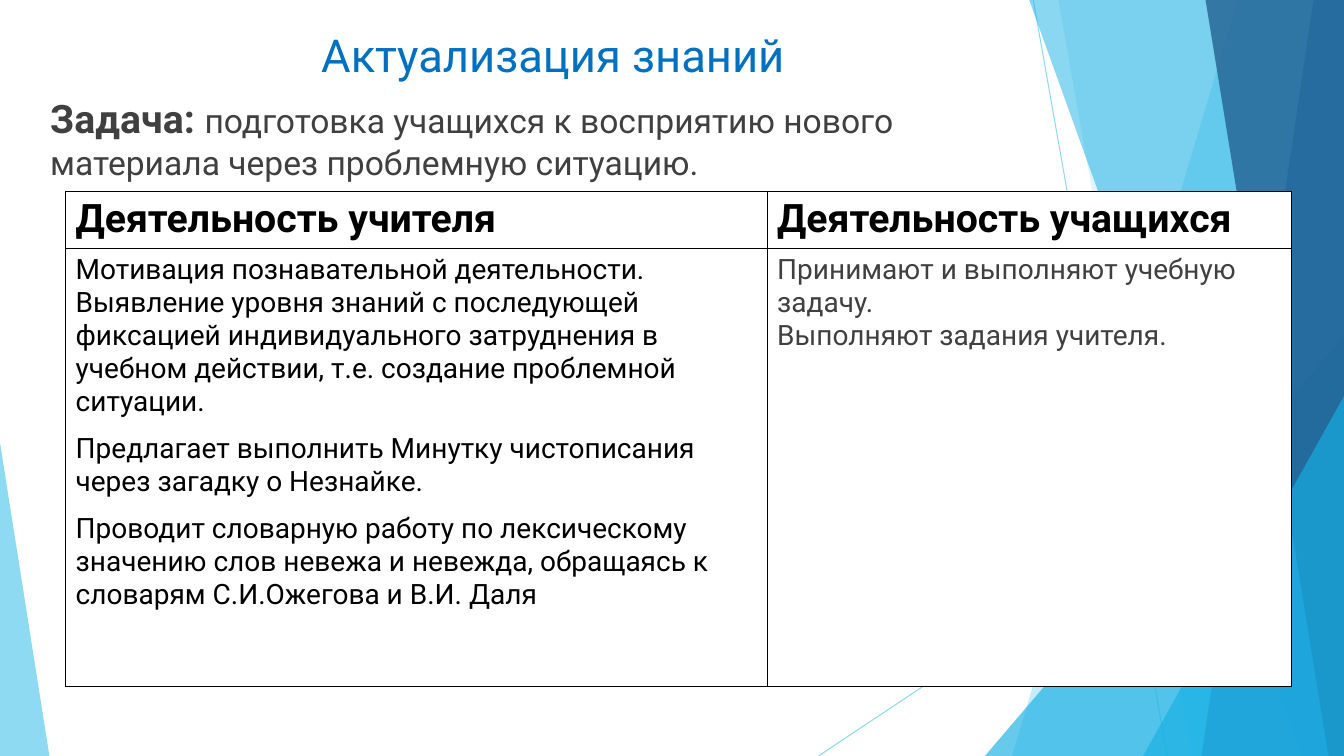
from dataclasses import dataclass

from lxml.etree import SubElement
from pptx import Presentation
from pptx.dml.color import RGBColor
from pptx.enum.shapes import MSO_CONNECTOR as Connector, MSO_SHAPE as Preset
from pptx.enum.text import MSO_ANCHOR as Anchor, PP_ALIGN as Align
from pptx.oxml.ns import qn
from pptx.util import Inches, Pt

FONT = "Roboto"
WHITE = RGBColor(0xFF, 0xFF, 0xFF)
BLACK = RGBColor(0x00, 0x00, 0x00)
GREY = RGBColor(0x40, 0x40, 0x40)
TITLE_BLUE = RGBColor(0x00, 0x70, 0xC0)
SKY = RGBColor(0x5F, 0xCB, 0xEF)
CYAN = RGBColor(0x17, 0xB0, 0xE4)
STEEL = RGBColor(0x2E, 0x83, 0xC3)
NAVY = RGBColor(0x22, 0x62, 0x92)

WIDTH, HEIGHT = Inches(13.333), Inches(7.5)


# Positions are percentages of the slide's width and height
def across(share: float) -> int:
    return round(WIDTH * share / 100)


def down(share: float) -> int:
    return round(HEIGHT * share / 100)


@dataclass
class Ray:
    """Thin line between two points."""
    x1: float
    y1: float
    x2: float
    y2: float


@dataclass
class Facet:
    """Full-height band from a slanted left edge to the slide's right edge."""
    top_left: float
    bottom_left: float
    color: RGBColor
    opacity: int


@dataclass
class Corner:
    """Triangle standing on the bottom edge; apex is 0 (left) or 1 (right)."""
    left: float
    top: float
    width: float
    apex: int
    color: RGBColor
    opacity: int


@dataclass
class Span:
    text: str
    size: float
    color: RGBColor
    bold: bool = False


@dataclass
class Cell:
    paragraphs: list[Span]
    space_after: int = 0


RAYS = [Ray(76.88, 0, 86.85, 100), Ray(100, 53.73, 60.9, 100)]
BACKDROP = [
    Facet(92.1, 75.3, SKY, 36),
    Facet(78.75, 88.73, SKY, 20),
    Corner(73.28, 44.4, 26.72, 1, CYAN, 66),
    Facet(76.58, 96.83, CYAN, 50),
    Facet(97.73, 89.4, STEEL, 70),
    Facet(89.7, 98.85, NAVY, 80),
    Corner(85.05, 52.4, 14.95, 1, CYAN, 66),
    Corner(0, 58.53, 3.68, 0, SKY, 70),
]

TITLE = [Span("Актуализация знаний", 32.4, TITLE_BLUE)]
TASK = [
    Span("Задача: ", 28, GREY, True),
    Span("подготовка учащихся к восприятию нового материала "
         "через проблемную ситуацию.", 24, GREY),
]
COLUMN_SHARES = [52.2, 39]
ROW_SHARES = [7.3, 57.9]
ROWS = [
    [Cell([Span("Деятельность учителя", 28, BLACK, True)]),
     Cell([Span("Деятельность учащихся", 28, BLACK, True)])],
    [Cell([
        Span("Мотивация познавательной деятельности. Выявление уровня знаний "
             "с последующей фиксацией индивидуального затруднения в учебном "
             "действии, т.е. создание проблемной ситуации.", 20, BLACK),
        Span("Предлагает выполнить Минутку чистописания через загадку "
             "о Незнайке.", 20, BLACK),
        Span("Проводит словарную работу по лексическому значению слов невежа "
             "и невежда, обращаясь к словарям С.И.Ожегова и В.И. Даля",
             20, BLACK),
    ], space_after=10),
     Cell([Span("Принимают и выполняют учебную задачу.", 20, GREY),
           Span("Выполняют задания учителя.", 20, GREY)])],
]


def set_opacity(fill_parent, opacity: int) -> None:
    color = fill_parent.find(qn("a:solidFill"))[0]
    SubElement(color, qn("a:alpha"), val=str(opacity * 1000))


def draw_ray(page, ray: Ray) -> None:
    line = page.shapes.add_connector(
        Connector.STRAIGHT, across(ray.x1), down(ray.y1),
        across(ray.x2), down(ray.y2))
    line.line.color.rgb = SKY
    line.line.width = Pt(0.75)
    properties = line.element.spPr
    set_opacity(properties.find(qn("a:ln")), 70)
    SubElement(properties, qn("a:effectLst"))


def draw_backdrop_part(page, part: Facet | Corner) -> None:
    if isinstance(part, Facet):
        outline = page.shapes.build_freeform(across(part.top_left), 0)
        outline.add_line_segments([
            (WIDTH, 0), (WIDTH, HEIGHT), (across(part.bottom_left), HEIGHT)])
        shape = outline.convert_to_shape()
    else:
        shape = page.shapes.add_shape(
            Preset.ISOSCELES_TRIANGLE, across(part.left), down(part.top),
            across(part.width), down(100 - part.top))
        shape.adjustments[0] = part.apex
    shape.shadow.inherit = False
    shape.line.fill.background()
    shape.fill.solid()
    shape.fill.fore_color.rgb = part.color
    set_opacity(shape.element.spPr, part.opacity)


def add_span(para, span: Span) -> None:
    run = para.add_run()
    run.text = span.text
    font = run.font
    font.name, font.size, font.bold = FONT, Pt(span.size), span.bold
    font.color.rgb = span.color


def draw_text(page, left: float, top: float, width: float, height: float,
              spans: list[Span], align: Align, anchor: Anchor) -> None:
    box = page.shapes.add_textbox(
        across(left), down(top), across(width), down(height))
    frame = box.text_frame
    frame.word_wrap = True
    frame.vertical_anchor = anchor
    para = frame.paragraphs[0]
    para.alignment = align
    for span in spans:
        add_span(para, span)


def fill_cell(target, cell: Cell) -> None:
    # Borders come before the fill in the cell's properties
    properties = target._tc.get_or_add_tcPr()
    for side in ("a:lnL", "a:lnR", "a:lnT", "a:lnB"):
        border = SubElement(properties, qn(side), w=str(Pt(1)))
        paint = SubElement(border, qn("a:solidFill"))
        SubElement(paint, qn("a:srgbClr"), val=str(BLACK))
    target.fill.solid()
    target.fill.fore_color.rgb = WHITE
    frame = target.text_frame
    for index, span in enumerate(cell.paragraphs):
        para = frame.add_paragraph() if index else frame.paragraphs[0]
        para.space_after = Pt(cell.space_after)
        add_span(para, span)


def draw_table(page, left: float, top: float) -> None:
    table = page.shapes.add_table(
        len(ROWS), len(COLUMN_SHARES), across(left), down(top),
        across(sum(COLUMN_SHARES)), down(sum(ROW_SHARES))).table
    for column, share in zip(table.columns, COLUMN_SHARES):
        column.width = across(share)
    for row, share, cells in zip(table.rows, ROW_SHARES, ROWS):
        row.height = down(share)
        for target, cell in zip(row.cells, cells):
            fill_cell(target, cell)


def main() -> None:
    deck = Presentation()
    deck.slide_width, deck.slide_height = WIDTH, HEIGHT
    page = deck.slides.add_slide(deck.slide_layouts[6])

    # Faceted backdrop
    for ray in RAYS:
        draw_ray(page, ray)
    for part in BACKDROP:
        draw_backdrop_part(page, part)

    # Heading, task and table
    draw_text(page, 6.15, 2.53, 70, 9.33, TITLE, Align.CENTER, Anchor.MIDDLE)
    draw_text(page, 3, 11.87, 73.05, 76.13, TASK, Align.LEFT, Anchor.TOP)
    draw_table(page, 4.88, 25.3)

    deck.save("out.pptx")


if __name__ == "__main__":
    main()
